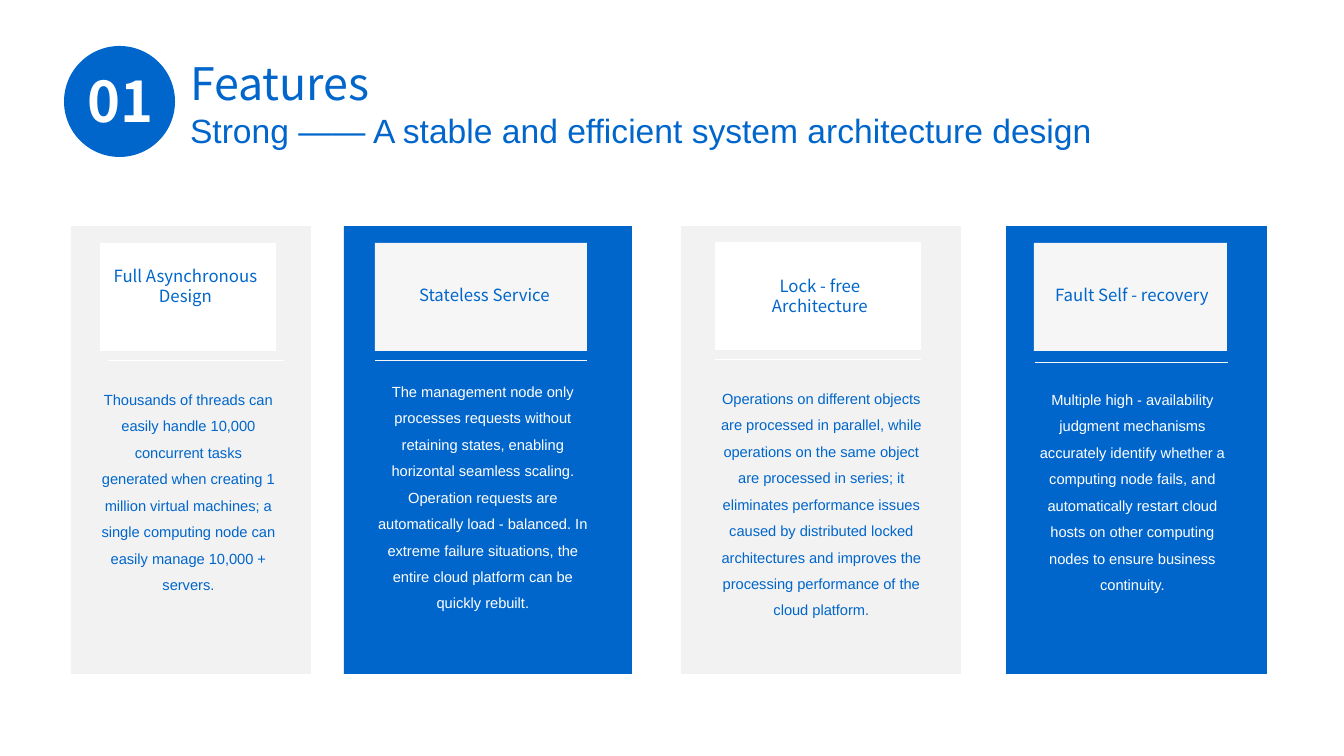
from pptx import Presentation
from pptx.dml.color import RGBColor
from pptx.enum.shapes import MSO_CONNECTOR, MSO_SHAPE
from pptx.enum.text import MSO_ANCHOR, MSO_AUTO_SIZE, PP_ALIGN
from pptx.oxml.ns import qn
from pptx.util import Emu, Pt
from lxml import etree

OVAL, RECTANGLE = MSO_SHAPE.OVAL, MSO_SHAPE.RECTANGLE
STRAIGHT = MSO_CONNECTOR.STRAIGHT
LEFT, CENTER = PP_ALIGN.LEFT, PP_ALIGN.CENTER
TOP, NO_AUTOFIT = MSO_ANCHOR.TOP, MSO_AUTO_SIZE.NONE

EMU_PER_PX = 914400 / 100.8
BLUE, WHITE, GREY, PALE = "0066CB", "FFFFFF", "F2F2F2", "F6F6F6"
SANS, HEADING = "Arial", "Noto Sans CJK SC"

# Content
NUMBER = "01"
TITLE = [
    ("Features", 32, HEADING),
    ("Strong —— A stable and efficient system architecture design", 24, SANS),
]
CARD_TOP, CARD_HEIGHT, LABEL_HEIGHT = 226, 448, 108
# Boxes are left, top, width, height; rules are left, y, width
CARDS = [
    dict(heading="Full Asynchronous Design",
         body="Thousands of threads can easily handle 10,000 concurrent tasks "
              "generated when creating 1 million virtual machines; a single "
              "computing node can easily manage 10,000 + servers.",
         card=(71, 240), label=(100, 243, 176), rule=(108, 360, 176),
         heading_box=(103, 261, 165, 72), body_box=(91, 377, 195, 224)),
    dict(heading="Stateless Service",
         body="The management node only processes requests without retaining "
              "states, enabling horizontal seamless scaling. Operation requests "
              "are automatically load - balanced. In extreme failure situations, "
              "the entire cloud platform can be quickly rebuilt.",
         card=(344, 288), label=(375, 243, 212), rule=(375, 360, 212),
         heading_box=(385, 280, 199, 30), body_box=(366, 369, 234, 251)),
    dict(heading="Lock - free Architecture",
         body="Operations on different objects are processed in parallel, while "
              "operations on the same object are processed in series; it "
              "eliminates performance issues caused by distributed locked "
              "architectures and improves the processing performance of the "
              "cloud platform.",
         card=(681, 280), label=(715, 242, 206), rule=(715, 359, 206),
         heading_box=(723, 271, 194, 50), body_box=(702, 376, 239, 277)),
    dict(heading="Fault Self - recovery",
         body="Multiple high - availability judgment mechanisms accurately "
              "identify whether a computing node fails, and automatically "
              "restart cloud hosts on other computing nodes to ensure business "
              "continuity.",
         card=(1006, 261), label=(1034, 243, 193), rule=(1035, 362, 193),
         heading_box=(1042, 280, 180, 30), body_box=(1026, 377, 213, 224)),
]


def px(*lengths):
    return [Emu(round(length * EMU_PER_PX)) for length in lengths]


def color(code):
    return RGBColor.from_string(code)


def add_block(kind, box, fill):
    block = page.shapes.add_shape(kind, *px(*box))
    block.shadow.inherit = False
    block.fill.solid()
    block.fill.fore_color.rgb = color(fill)
    block.line.fill.background()


def add_rule(left, y, width, ink):
    rule = page.shapes.add_connector(STRAIGHT, *px(left, y, left + width, y))
    rule.line.color.rgb = color(ink)
    rule.line.width = Pt(0.5)
    etree.SubElement(rule._element.spPr, qn("a:effectLst"))


def write(frame, lines, ink, align=CENTER, bold=False, spacing=1.0):
    frame.word_wrap = True
    frame.auto_size = NO_AUTOFIT
    frame.vertical_anchor = TOP
    for index, (text, size, font) in enumerate(lines):
        para = frame.add_paragraph() if index else frame.paragraphs[0]
        para.alignment = align
        para.line_spacing = spacing
        span = para.add_run()
        span.text = text
        span.font.size = Pt(size)
        span.font.name = font
        span.font.bold = bold
        span.font.color.rgb = color(ink)


def add_text(box, *details, **options):
    write(page.shapes.add_textbox(*px(*box)).text_frame, *details, **options)


deck = Presentation()
deck.slide_width, deck.slide_height = px(1344, 756)
page = deck.slides.add_slide(deck.slide_layouts.get_by_name("Title Only"))

# Header
add_block(OVAL, (64, 46, 111, 111), BLUE)
add_text((67, 62, 107, 78), [(NUMBER, 40, HEADING)], WHITE, bold=True)
title = page.shapes.title
title.left, title.top, title.width, title.height = px(180, 51, 960, 105)
write(title.text_frame, TITLE, BLUE, align=LEFT)

# Cards, grey and blue in turn
for index, card in enumerate(CARDS):
    card_fill, label_fill, ink = [(GREY, WHITE, BLUE), (BLUE, PALE, WHITE)][index % 2]
    left, width = card["card"]
    add_block(RECTANGLE, (left, CARD_TOP, width, CARD_HEIGHT), card_fill)
    add_block(RECTANGLE, (*card["label"], LABEL_HEIGHT), label_fill)
    add_rule(*card["rule"], label_fill)
    add_text(card["heading_box"], [(card["heading"], 12, HEADING)], BLUE)
    add_text(card["body_box"], [(card["body"], 10.5, SANS)], ink, spacing=1.5)

deck.save("out.pptx")
